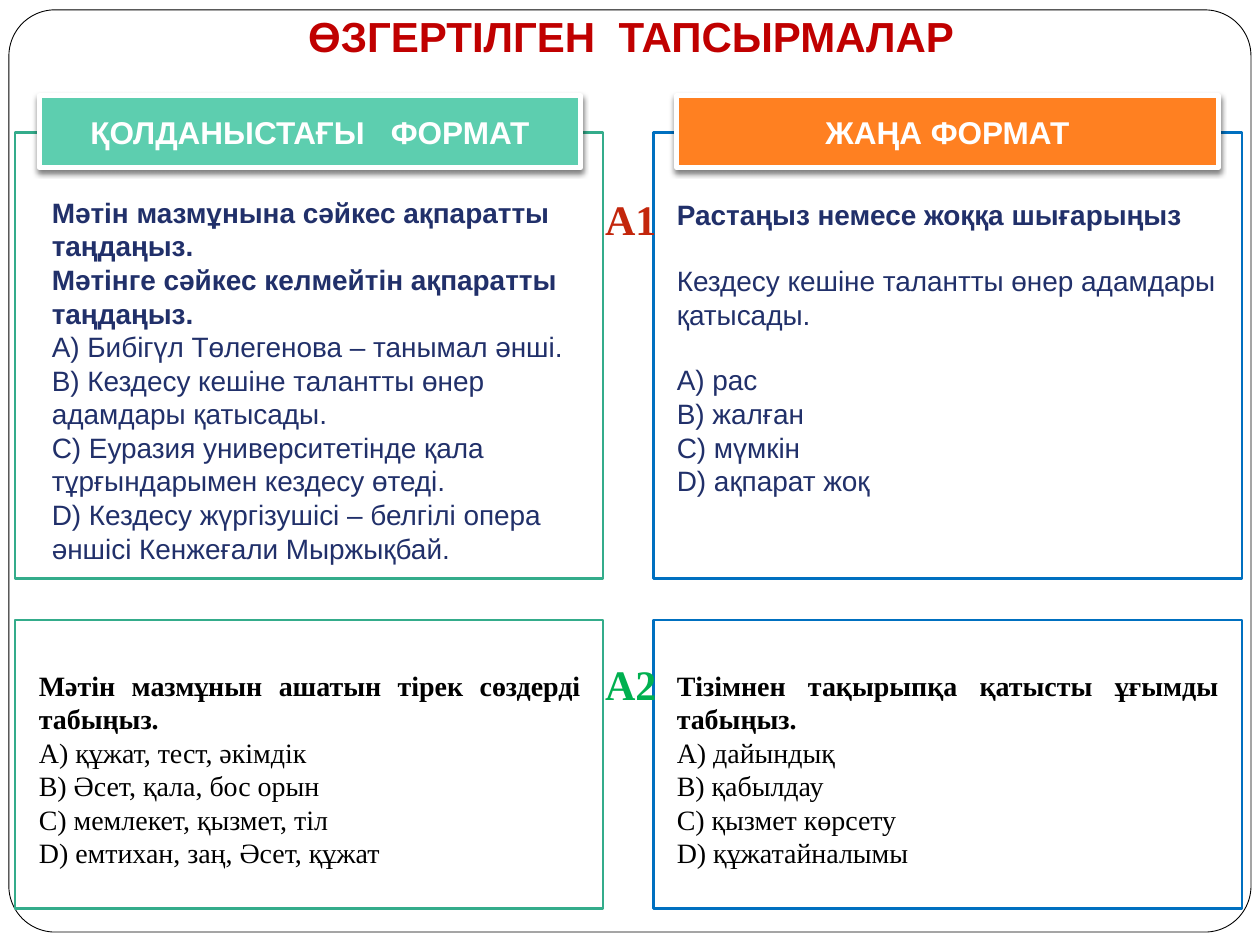
from lxml.etree import SubElement
from pptx import Presentation
from pptx.dml.color import RGBColor
from pptx.enum.shapes import MSO_SHAPE as Shape
from pptx.enum.text import MSO_ANCHOR as Anchor, MSO_AUTO_SIZE as AutoSize, PP_ALIGN as Align
from pptx.oxml.ns import qn
from pptx.util import Cm, Pt

SANS, SERIF = "Arial", "Times New Roman"
GREEN, BLUE, NAVY = "34AC8B", "0070C0", "21306A"


def rgb(value):
    return RGBColor.from_string(value)


class Deck:
    def __init__(self):
        self.prs = Presentation()
        self.prs.slide_width, self.prs.slide_height = Cm(25.4), Cm(19.05)
        self.s = self.prs.slides.add_slide(self.prs.slide_layouts[4])

    def place(self, sp, x, y, w, h):
        sp.left, sp.top, sp.width, sp.height = Cm(x), Cm(y), Cm(w), Cm(h)

    def style(self, p, size, color, font=SANS, bold=True, align=Align.CENTER):
        p.alignment = align
        p.font.size, p.font.name, p.font.bold = Pt(size), font, bold
        p.font.color.rgb = rgb(color)

    def box(self, x, y, w, h, line, width, fill=None, kind=Shape.RECTANGLE):
        sp = self.s.shapes.add_shape(kind, Cm(x), Cm(y), Cm(w), Cm(h))
        sp.shadow.inherit = False
        sp.line.color.rgb, sp.line.width = rgb(line), Pt(width)
        if fill:
            sp.fill.solid()
            sp.fill.fore_color.rgb = rgb(fill)
        else:
            sp.fill.background()
        return sp

    def frame(self):
        sp = self.box(0.18, 0.2, 25.04, 18.59, "000000", 0.5, kind=Shape.ROUNDED_RECTANGLE)
        sp.adjustments[0] = 0.05

    def header(self, text, x, fill):
        sp = self.box(x, 1.93, 10.92, 1.45, "FFFFFF", 3, fill)
        effects = sp._element.spPr.find(qn("a:effectLst"))
        shadow = SubElement(effects, qn("a:outerShdw"), blurRad=str(Pt(3)),
                            dist=str(Pt(2)), dir="5400000", rotWithShape="0")
        color = SubElement(shadow, qn("a:srgbClr"), val="000000")
        SubElement(color, qn("a:alpha"), val="50000")
        tf = sp.text_frame
        tf.vertical_anchor = Anchor.MIDDLE
        tf.text = text
        self.style(tf.paragraphs[0], 18, "FFFFFF")

    def heading(self, tf, text, color, font):
        tf.auto_size, tf.word_wrap, tf.vertical_anchor = AutoSize.NONE, False, Anchor.TOP
        tf.text = text
        p = tf.paragraphs[0]
        p.line_spacing = 0.9
        self.style(p, 24, color, font)

    def title(self, text):
        sp = self.s.shapes.title
        self.place(sp, 5.89, 0.2, 13.67, 1.19)
        self.heading(sp.text_frame, text, "C00000", SANS)

    def label(self, text, y, color):
        sp = self.s.shapes.add_textbox(Cm(11.94), Cm(y), Cm(1.55), Cm(1.19))
        self.heading(sp.text_frame, text, color, SERIF)

    def task(self, idx, x, y, h, questions, answers, color=NAVY, font=SANS,
             align=Align.LEFT, gaps=()):
        sp = self.s.placeholders[idx]
        self.place(sp, x, y, 11.43, h)
        tf = sp.text_frame
        tf.auto_size, tf.word_wrap, tf.vertical_anchor = AutoSize.NONE, True, Anchor.TOP
        for i, text in enumerate(questions + answers):
            p = tf.add_paragraph() if i else tf.paragraphs[0]
            p.text = text
            asked = i < len(questions)
            self.style(p, 16, color, font, asked, align if asked else Align.LEFT)
            p.space_before, p.space_after = Pt(0), Pt(18.4 if i in gaps else 0)
            pPr = p._p.get_or_add_pPr()
            pPr.set("marL", "0")
            pPr.set("indent", "0")
            pPr.insert_element_before(pPr.makeelement(qn("a:buNone"), {}),
                                      "a:tabLst", "a:defRPr", "a:extLst")


def main():
    deck = Deck()
    deck.frame()
    deck.title("ӨЗГЕРТІЛГЕН  ТАПСЫРМАЛАР")
    for x, line in ((0.3, GREEN), (13.18, BLUE)):
        for y, h in ((2.67, 8.99), (12.5, 5.82)):
            deck.box(x, y, 11.86, h, line, 1.5)
    deck.header("ҚОЛДАНЫСТАҒЫ   ФОРМАТ", 0.79, "5DCEAF")
    deck.header("ЖАҢА ФОРМАТ", 13.64, "FF8021")

    deck.task(1, 0.79, 3.81, 7.77,
              ["Мәтін мазмұнына сәйкес ақпаратты таңдаңыз.",
               "Мәтінге сәйкес келмейтін ақпаратты таңдаңыз."],
              ["A) Бибігүл Төлегенова – танымал әнші.",
               "B) Кездесу кешіне талантты өнер адамдары қатысады.",
               "C) Еуразия университетінде қала тұрғындарымен кездесу өтеді.",
               "D) Кездесу жүргізушісі – белгілі опера әншісі Кенжеғали Мыржықбай."])
    deck.task(2, 13.39, 3.86, 6.4,
              ["Растаңыз немесе жоққа шығарыңыз"],
              ["Кездесу кешіне талантты өнер адамдары қатысады.",
               "А) рас", "В) жалған", "С) мүмкін", "D) ақпарат жоқ"], gaps=(0, 1))
    serif = dict(color="000000", font=SERIF, align=Align.JUSTIFY)
    deck.task(3, 0.53, 13.34, 4.37,
              ["Мәтін мазмұнын ашатын тірек сөздерді табыңыз."],
              ["А) құжат, тест, әкімдік", "В) Әсет, қала, бос орын",
               "С) мемлекет, қызмет, тіл", "D) емтихан, заң, Әсет, құжат"], **serif)
    deck.task(4, 13.39, 13.34, 4.37,
              ["Тізімнен тақырыпқа қатысты ұғымды табыңыз."],
              ["А) дайындық", "В) қабылдау", "С) қызмет көрсету",
               "D) құжатайналымы"], **serif)

    deck.label("А1", 3.89, "C3260C")
    deck.label("А2", 13.26, "00B050")
    deck.prs.save("out.pptx")


if __name__ == "__main__":
    main()
